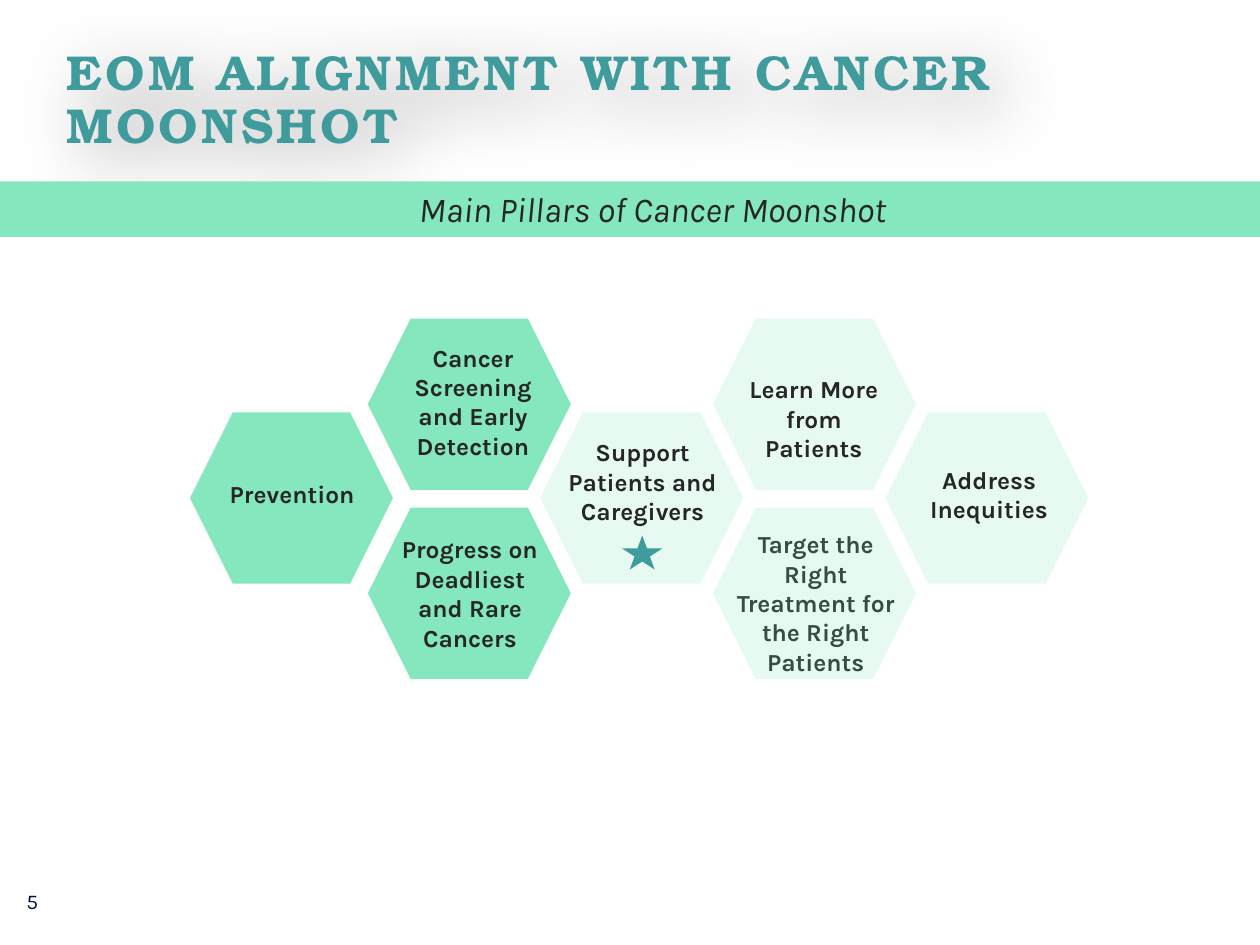
import pptx
import pptx.util
import pptx.dml.color
import pptx.enum.shapes
import pptx.enum.text
import pptx.oxml
import pptx.oxml.ns
from dataclasses import dataclass
from lxml import etree

Pt = pptx.util.Pt
SHAPE = pptx.enum.shapes.MSO_SHAPE
ALIGN = pptx.enum.text.PP_ALIGN
ANCHOR = pptx.enum.text.MSO_ANCHOR
qn = pptx.oxml.ns.qn


@dataclass(frozen=True)
class Theme:
    teal: str = "409B9C"
    mint: str = "85E7BE"
    pale: str = "87E8BD"
    ink: str = "262626"
    navy: str = "00153B"
    title_font: str = "TeX Gyre Bonum"
    body_font: str = "Karla"
    title_size: int = 28
    band_size: int = 20
    label_size: int = 14
    number_size: int = 12


class SlideBuilder:
    def __init__(self, slide, theme):
        self.s = slide
        self.theme = theme

    def set_text(self, sp, lines, size, color, font=None, align=ALIGN.LEFT,
                 bold=False, italic=False, insets=(7.2, 3.6, 7.2, 3.6), anchor=ANCHOR.TOP):
        tf = sp.text_frame
        tf.word_wrap = True
        tf.vertical_anchor = anchor
        tf.margin_left, tf.margin_top, tf.margin_right, tf.margin_bottom = map(Pt, insets)
        for i, line in enumerate(lines):
            p = tf.add_paragraph() if i else tf.paragraphs[0]
            p.add_run().text = line
            p.alignment = align
            p.font.name = font or self.theme.body_font
            p.font.size = Pt(size)
            p.font.bold = bold
            p.font.italic = italic
            p.font.color.rgb = pptx.dml.color.RGBColor.from_string(color)

    def text(self, box, lines, size, color, **style):
        sp = self.s.shapes.add_textbox(*map(Pt, box))
        self.set_text(sp, lines, size, color, **style)
        return sp

    def shape(self, kind, box, color, opacity=100):
        sp = self.s.shapes.add_shape(kind, *map(Pt, box))
        sp.shadow.inherit = False
        sp.line.fill.background()
        sp.fill.solid()
        sp.fill.fore_color.rgb = pptx.dml.color.RGBColor.from_string(color)
        if opacity < 100:
            clr = sp._element.spPr.find(qn("a:solidFill"))[0]
            etree.SubElement(clr, qn("a:alpha"), val=str(opacity * 1000))
        return sp

    def title(self, box, text):
        t = self.theme
        sp = self.text(box, [text], t.title_size, t.teal, font=t.title_font, bold=True)
        p = sp.text_frame.paragraphs[0]
        p.line_spacing = 0.9
        p.runs[0]._r.get_or_add_rPr().set("spc", "200")
        # Soft shadow behind the letters
        sp._element.spPr.append(pptx.oxml.parse_xml(
            '<a:effectLst xmlns:a="http://schemas.openxmlformats.org/drawingml/2006/main">'
            '<a:outerShdw blurRad="508000" dist="152400" dir="2700000" algn="tl" rotWithShape="0">'
            '<a:srgbClr val="000000"><a:alpha val="40000"/></a:srgbClr>'
            '</a:outerShdw></a:effectLst>'))

    def band(self, box, text):
        sp = self.shape(SHAPE.RECTANGLE, box, self.theme.mint)
        self.set_text(sp, [text], self.theme.band_size, self.theme.ink, italic=True,
                      align=ALIGN.CENTER, insets=(33, 3.6, 7.2, 3.6))

    def hexagon(self, left, top, pale):
        t = self.theme
        self.shape(SHAPE.HEXAGON, (left, top, 116, 98),
                   t.pale if pale else t.mint, 20 if pale else 100)

    def label(self, box, lines):
        self.text(box, lines, self.theme.label_size, self.theme.ink, bold=True,
                  align=ALIGN.CENTER, insets=(0, 0, 0, 0))


def main():
    prs = pptx.Presentation()
    prs.slide_width, prs.slide_height = Pt(720), Pt(540)
    theme = Theme()
    slide = SlideBuilder(prs.slides.add_slide(prs.slide_layouts[6]), theme)

    # Slide number, title and subtitle band
    slide.text((8, 500.5, 42, 29), ["5"], theme.number_size, theme.navy, anchor=ANCHOR.MIDDLE)
    slide.title((31, 23.8, 612.7, 58.3), "EOM ALIGNMENT WITH CANCER MOONSHOT")
    slide.band((0, 103.7, 720, 31.7), "Main Pillars of Cancer Moonshot")

    # Honeycomb of pillars: column, row top, pale, label box, label lines
    columns = [108.6] + [210.2 + 98.6 * i for i in range(4)]
    upper, middle, lower = 182, 235.6, 290
    pillars = [
        (0, middle, False, (98, 273.6, 138, 17), ["Prevention"]),
        (1, upper, False, (226.8, 195.8, 87, 68), ["Cancer Screening and Early Detection"]),
        (1, lower, False, (224.6, 305.3, 88, 68), ["Progress on Deadliest and Rare", "Cancers"]),
        (2, middle, True, (318.2, 249.8, 98, 51), ["Support Patients and Caregivers"]),
        (3, upper, True, (424, 213.8, 82, 34), ["Learn More from Patients"]),
        (4, middle, True, (517.7, 265.7, 95, 34), ["Address Inequities"]),
    ]
    for column, top, pale, box, lines in pillars:
        slide.hexagon(columns[column], top, pale)
        slide.label(box, lines)

    # The last pillar's tint lies over its label
    slide.label((419, 302.4, 94.3, 68), ["Target the", "Right Treatment for the Right Patients"])
    slide.hexagon(columns[3], lower, True)

    # Star on the patient support pillar
    slide.shape(SHAPE.STAR_5_POINT, (355.5, 306, 23, 19.5), theme.teal)

    prs.save("out.pptx")


if __name__ == "__main__":
    main()
